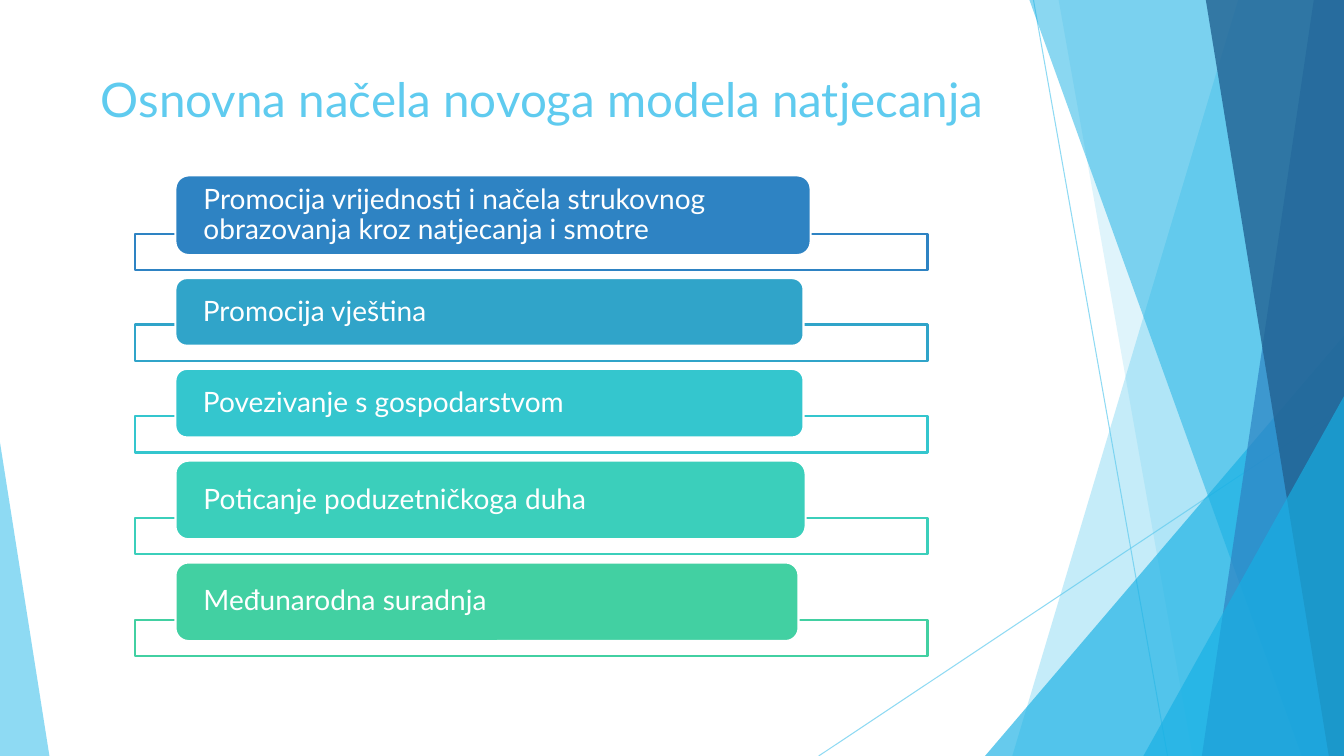
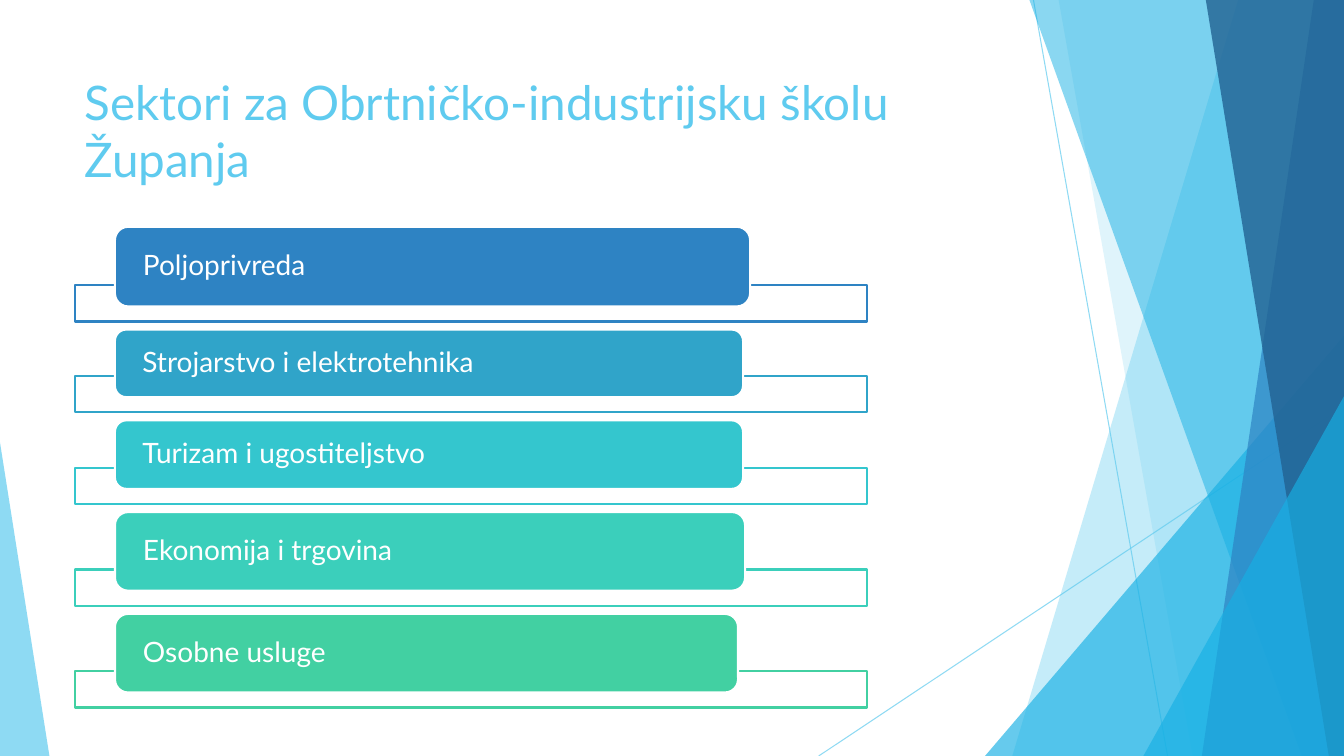
from pptx import Presentation
from pptx.dml.color import RGBColor
from pptx.enum.shapes import MSO_CONNECTOR, MSO_SHAPE
from pptx.enum.text import MSO_ANCHOR, MSO_AUTO_SIZE, PP_ALIGN
from pptx.oxml.ns import qn
from pptx.util import Emu, Pt
from lxml.etree import SubElement

PX = 9144
WIDTH, HEIGHT = 1333, 750
TITLE_ONLY = 5

COLORS = {
    "white": "FFFFFF",
    "sky": "5FCBEF",
    "cyan": "17B0E4",
    "blue": "2E83C3",
    "navy": "226292",
    "lagoon": "30A4C9",
    "turquoise": "34C6CE",
    "mint": "3BCFBB",
    "green": "42D0A2",
}

RAYS = [((1025, 0), (1158, HEIGHT)), ((WIDTH, 403), (812, HEIGHT))]
FACETS = [
    ("band", (1228, 1004), "sky", 36),
    ("band", (1050, 1183), "sky", 20),
    ("triangle", (977, 333, 356, 417, 1), "cyan", 66),
    ("band", (1021, 1291), "cyan", 50),
    ("band", (1303, 1192), "blue", 70),
    ("band", (1196, 1318), "navy", 80),
    ("triangle", (1134, 393, 199, 357, 1), "cyan", 66),
    ("triangle", (0, 439, 49, 311, 0), "sky", 70),
]

CARDS = [
    ("blue", 630, 79),
    ("lagoon", 623, 67),
    ("turquoise", 623, 68),
    ("mint", 625, 78),
    ("green", 618, 78),
]
CARD_INDENT, CARD_GAP = 40, 23
BAR_WIDTH, BAR_HEIGHT, BAR_OVERLAP = 786, 36, 21

SLIDES = [
    {
        "title": "Osnovna načela novoga modela natjecanja",
        "title_area": (90, 64, 982, 144),
        "list_corner": (134, 174),
        "items": [
            "Promocija vrijednosti i načela strukovnog obrazovanja kroz natjecanja i smotre",
            "Promocija vještina",
            "Povezivanje s gospodarstvom",
            "Poticanje poduzetničkoga duha",
            "Međunarodna suradnja",
        ],
    },
    {
        "title": "Sektori za Obrtničko-industrijsku školu Županja",
        "title_area": (74, 67, 940, 144),
        "list_corner": (74, 225),
        "items": [
            "Poljoprivreda",
            "Strojarstvo i elektrotehnika",
            "Turizam i ugostiteljstvo",
            "Ekonomija i trgovina",
            "Osobne usluge",
        ],
    },
]


def px(length):
    return Emu(length * PX)


def rgb(name):
    return RGBColor.from_string(COLORS[name])


def assign(target, values):
    for name, value in values.items():
        setattr(target, name, value)


def set_opacity(parent, percent):
    color = parent.find(qn("a:solidFill"))[0]
    SubElement(color, qn("a:alpha"), val=str(percent * 1000))


class SlideBuilder:
    title_frame = {
        "word_wrap": True,
        "auto_size": MSO_AUTO_SIZE.NONE,
        "vertical_anchor": MSO_ANCHOR.TOP,
    }
    title_para = {"alignment": PP_ALIGN.LEFT}
    title_font = {"name": "Lato", "size": Pt(34)}
    card_frame = {
        "word_wrap": True,
        "vertical_anchor": MSO_ANCHOR.MIDDLE,
        "margin_left": px(24),
        "margin_right": px(24),
        "margin_top": 0,
        "margin_bottom": 0,
    }
    card_para = {"alignment": PP_ALIGN.LEFT, "line_spacing": 0.9}
    card_font = {"name": "Lato", "size": Pt(20)}

    def __init__(self, deck):
        self.deck = deck
        self.page = None

    def start(self):
        self.page = self.deck.slides.add_slide(self.deck.slide_layouts[TITLE_ONLY])
        self.backdrop()

    def fill_text(self, frame, text, color, frame_values, para_values, font_values):
        assign(frame, frame_values)
        para = frame.paragraphs[0]
        assign(para, para_values)
        span = para.add_run()
        span.text = text
        assign(span.font, font_values)
        span.font.color.rgb = rgb(color)

    def paint(self, shape, fill, line=None, opacity=None):
        shape.shadow.inherit = False
        shape.fill.solid()
        shape.fill.fore_color.rgb = rgb(fill)
        if opacity:
            set_opacity(shape._element.spPr, opacity)
        if line:
            shape.line.color.rgb = rgb(line)
            shape.line.width = Pt(1.5)
        else:
            shape.line.fill.background()

    def box(self, kind, area):
        return self.page.shapes.add_shape(kind, *map(px, area))

    def ray(self, start, end):
        line = self.page.shapes.add_connector(
            MSO_CONNECTOR.STRAIGHT, *map(px, start + end)
        )
        line.line.color.rgb = rgb("sky")
        line.line.width = Pt(0.75)
        properties = line._element.spPr
        set_opacity(properties.find(qn("a:ln")), 70)
        SubElement(properties, qn("a:effectLst"))

    def band(self, top_x, bottom_x):
        builder = self.page.shapes.build_freeform(top_x, 0, scale=PX)
        builder.add_line_segments([(WIDTH, 0), (WIDTH, HEIGHT), (bottom_x, HEIGHT)])
        return builder.convert_to_shape()

    def triangle(self, left, top, width, height, apex):
        shape = self.box(MSO_SHAPE.ISOSCELES_TRIANGLE, (left, top, width, height))
        shape.adjustments[0] = apex
        return shape

    def backdrop(self):
        for start, end in RAYS:
            self.ray(start, end)
        for kind, geometry, color, opacity in FACETS:
            draw = self.band if kind == "band" else self.triangle
            self.paint(draw(*geometry), color, opacity=opacity)

    def title(self, text, area):
        title = self.page.shapes.title
        assign(title, dict(zip(("left", "top", "width", "height"), map(px, area))))
        self.fill_text(title.text_frame, text, "sky",
                       self.title_frame, self.title_para, self.title_font)

    def card(self, text, color, area):
        card = self.box(MSO_SHAPE.ROUNDED_RECTANGLE, area)
        self.paint(card, color, line="white")
        self.fill_text(card.text_frame, text, "white",
                       self.card_frame, self.card_para, self.card_font)

    def card_list(self, items, left, top):
        for text, (color, width, height) in zip(items, CARDS):
            bar_top = top + height - BAR_OVERLAP
            bar = self.box(MSO_SHAPE.RECTANGLE, (left, bar_top, BAR_WIDTH, BAR_HEIGHT))
            self.paint(bar, "white", line=color, opacity=90)
            self.card(text, color, (left + CARD_INDENT, top, width, height))
            top += height + CARD_GAP


def main():
    deck = Presentation()
    assign(deck, {"slide_width": px(WIDTH), "slide_height": px(HEIGHT)})
    builder = SlideBuilder(deck)
    for content in SLIDES:
        builder.start()
        builder.title(content["title"], content["title_area"])
        builder.card_list(content["items"], *content["list_corner"])
    deck.save("out.pptx")


if __name__ == "__main__":
    main()
